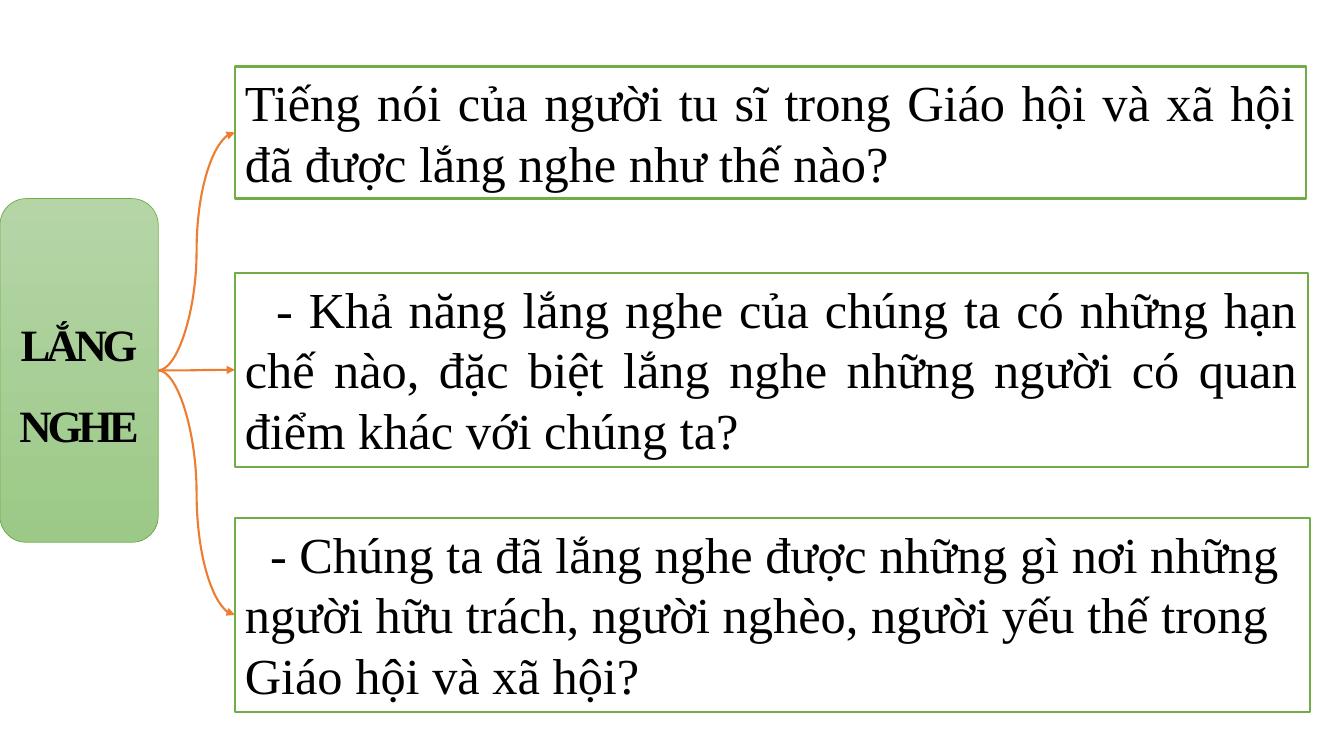
"""Build a slide that links a listening topic to three questions."""
from lxml import etree
from pptx import Presentation
from pptx import util as u
from pptx.dml.color import RGBColor
from pptx.enum import shapes, text
from pptx.oxml.ns import qn

WHITE = RGBColor(0xFF, 0xFF, 0xFF)
BLACK = RGBColor(0x00, 0x00, 0x00)
GREEN = RGBColor(0x70, 0xAD, 0x47)
ORANGE = RGBColor(0xED, 0x7D, 0x31)
LIGHT_GREEN = RGBColor(0xB5, 0xD5, 0xA7)
MID_GREEN = RGBColor(0x9C, 0xC9, 0x87)

LEFT, ALIGN = text.PP_ALIGN.LEFT, text.PP_ALIGN
QUESTION_LEFT = 2.33
QUESTIONS = [
    (0.66, 10.62, 1.31, ALIGN.JUSTIFY, 0,
     "Tiếng nói của người tu sĩ trong Giáo hội và xã hội đã được lắng nghe như thế nào?"),
    (2.71, 10.64, 1.92, ALIGN.JUSTIFY, 0.31,
     "- Khả năng lắng nghe của chúng ta có những hạn chế nào, đặc biệt lắng nghe "
     "những người có quan điểm khác với chúng ta?"),
    (5.14, 10.66, 1.92, LEFT, 0.25,
     "- Chúng ta đã lắng nghe được những gì nơi những người hữu trách, người nghèo, "
     "người yếu thế trong Giáo hội và xã hội?"),
]


def add_box(s, kind, box, line_width, anchor):
    sp = s.shapes.add_shape(kind, *[u.Inches(v) for v in box])
    sp.shadow.inherit = False
    sp.line.color.rgb = GREEN
    sp.line.width = u.Pt(line_width)
    sp.text_frame.word_wrap = True
    sp.text_frame.vertical_anchor = anchor
    return sp


def add_text(p, words, font):
    r = p.add_run()
    r.text = words
    r.font.color.rgb = BLACK
    for name, value in font.items():
        setattr(r.font, name, value)
    return r


prs = Presentation()
prs.slide_width, prs.slide_height = u.Inches(13.33), u.Inches(7.5)
s = prs.slides.add_slide(prs.slide_layouts[6])

question_font = {"name": "Times New Roman", "size": u.Pt(36), "bold": False}
questions = []
for top, width, height, align, indent, words in QUESTIONS:
    sp = add_box(s, shapes.MSO_SHAPE.RECTANGLE, (QUESTION_LEFT, top, width, height),
                 1.5, text.MSO_ANCHOR.TOP)
    sp.fill.solid()
    sp.fill.fore_color.rgb = WHITE
    sp.text_frame.auto_size = text.MSO_AUTO_SIZE.SHAPE_TO_FIT_TEXT
    p = sp.text_frame.paragraphs[0]
    p.alignment = align
    p._p.get_or_add_pPr().set("indent", str(u.Inches(indent)))
    add_text(p, words, question_font)
    questions.append(sp)

topic = add_box(s, shapes.MSO_SHAPE.ROUNDED_RECTANGLE, (0, 1.97, 1.57, 3.41),
                0.5, text.MSO_ANCHOR.MIDDLE)
topic.fill.gradient()
topic.fill.gradient_angle = 270
for stop, color in zip(topic.fill.gradient_stops, (LIGHT_GREEN, MID_GREEN)):
    stop.color.rgb = color
topic_font = {"name": "Times New Roman", "size": u.Pt(32), "bold": True}
tf = topic.text_frame
for i, word in enumerate(("LẮNG", "NGHE")):
    p = tf.add_paragraph() if i else tf.paragraphs[0]
    p.alignment = ALIGN.CENTER
    p.line_spacing = 1.5
    r = add_text(p, word, topic_font)
    r._r.get_or_add_rPr().set("spc", "-300")

for question in questions:
    arrow = s.shapes.add_connector(shapes.MSO_CONNECTOR.CURVE, 0, 0, 0, 0)
    arrow.begin_connect(topic, 3)
    arrow.end_connect(question, 1)
    arrow.line.color.rgb = ORANGE
    arrow.line.width = u.Pt(1.5)
    etree.SubElement(arrow.line._get_or_add_ln(), qn("a:tailEnd"), type="triangle")
    etree.SubElement(arrow._element.spPr, qn("a:effectLst"))

prs.save("out.pptx")
